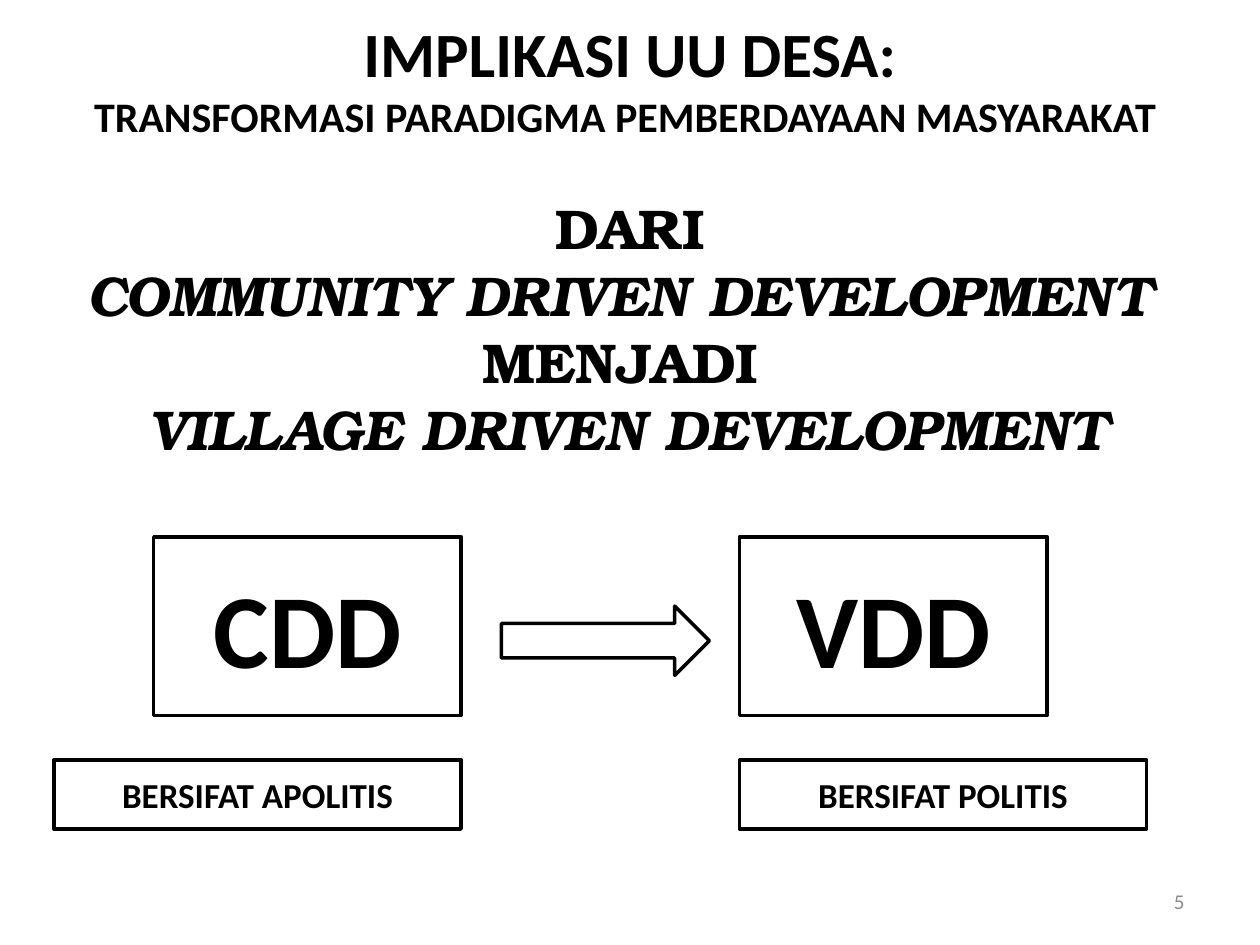
from pptx import Presentation
from pptx.dml.color import RGBColor
from pptx.enum.shapes import MSO_SHAPE
from pptx.enum.text import MSO_ANCHOR, PP_ALIGN
from pptx.util import Inches, Pt

BLACK = RGBColor(0x00, 0x00, 0x00)
WHITE = RGBColor(0xFF, 0xFF, 0xFF)
GRAY = RGBColor(0x8C, 0x8C, 0x8C)
BODY_FONT = "Calibri"
SERIF_FONT = "TeX Gyre Bonum"


def write_line(paragraph, text, size, font=BODY_FONT, color=BLACK,
               bold=True, italic=False, align=PP_ALIGN.CENTER):
    paragraph.alignment = align
    run = paragraph.add_run()
    run.text = text
    run.font.name = font
    run.font.size = Pt(size)
    run.font.bold = bold
    run.font.italic = italic
    run.font.color.rgb = color


class SlideBuilder:
    """Holds the outline style and the slide being built."""

    line_width = Pt(2)

    def __init__(self, slide):
        self.slide = slide

    def text_box(self, left, top, width, height, lines, **style):
        """Add lines of (text, own format); style applies to all of them."""
        box = self.slide.shapes.add_textbox(
            Inches(left), Inches(top), Inches(width), Inches(height))
        frame = box.text_frame
        frame.word_wrap = True
        frame.vertical_anchor = MSO_ANCHOR.MIDDLE
        for index, (text, own_style) in enumerate(lines):
            paragraph = frame.add_paragraph() if index else frame.paragraphs[0]
            write_line(paragraph, text, **{**style, **own_style})

    def outlined_shape(self, kind, left, top, width, height):
        shape = self.slide.shapes.add_shape(
            kind, Inches(left), Inches(top), Inches(width), Inches(height))
        shape.shadow.inherit = False
        shape.fill.solid()
        shape.fill.fore_color.rgb = WHITE
        shape.line.color.rgb = BLACK
        shape.line.width = self.line_width
        return shape

    def label_box(self, left, top, width, height, text, size):
        shape = self.outlined_shape(MSO_SHAPE.RECTANGLE, left, top, width, height)
        frame = shape.text_frame
        frame.word_wrap = True
        frame.vertical_anchor = MSO_ANCHOR.MIDDLE
        write_line(frame.paragraphs[0], text, size)

    def right_arrow(self, left, top, width, height):
        self.outlined_shape(MSO_SHAPE.RIGHT_ARROW, left, top, width, height)


def main():
    presentation = Presentation()
    presentation.slide_width = Inches(10)
    presentation.slide_height = Inches(7.5)
    builder = SlideBuilder(presentation.slides.add_slide(presentation.slide_layouts[6]))

    builder.text_box(7.17, 6.95, 2.33, 0.4, [("5", {})], size=12, color=GRAY,
                     bold=False, align=PP_ALIGN.RIGHT)
    builder.text_box(0, 0, 10, 1.23, [
        ("IMPLIKASI UU DESA:", {"size": 36}),
        ("TRANSFORMASI PARADIGMA PEMBERDAYAAN MASYARAKAT ", {"size": 24}),
    ])
    builder.text_box(0, 1.47, 10, 2.26, [
        ("DARI", {}),
        ("COMMUNITY DRIVEN DEVELOPMENT ", {"italic": True}),
        ("MENJADI ", {}),
        ("VILLAGE DRIVEN DEVELOPMENT", {"italic": True}),
    ], size=32, font=SERIF_FONT)

    paradigms = [
        (1.22, "CDD", 0.43, "BERSIFAT APOLITIS"),
        (5.87, "VDD", 5.87, "BERSIFAT POLITIS"),
    ]
    for paradigm_left, paradigm, trait_left, trait in paradigms:
        builder.label_box(paradigm_left, 4.26, 2.44, 1.42, paradigm, 60)
        builder.label_box(trait_left, 6.03, 3.23, 0.55, trait, 20)
    builder.right_arrow(3.98, 4.81, 1.65, 0.55)

    presentation.save("out.pptx")


if __name__ == "__main__":
    main()
